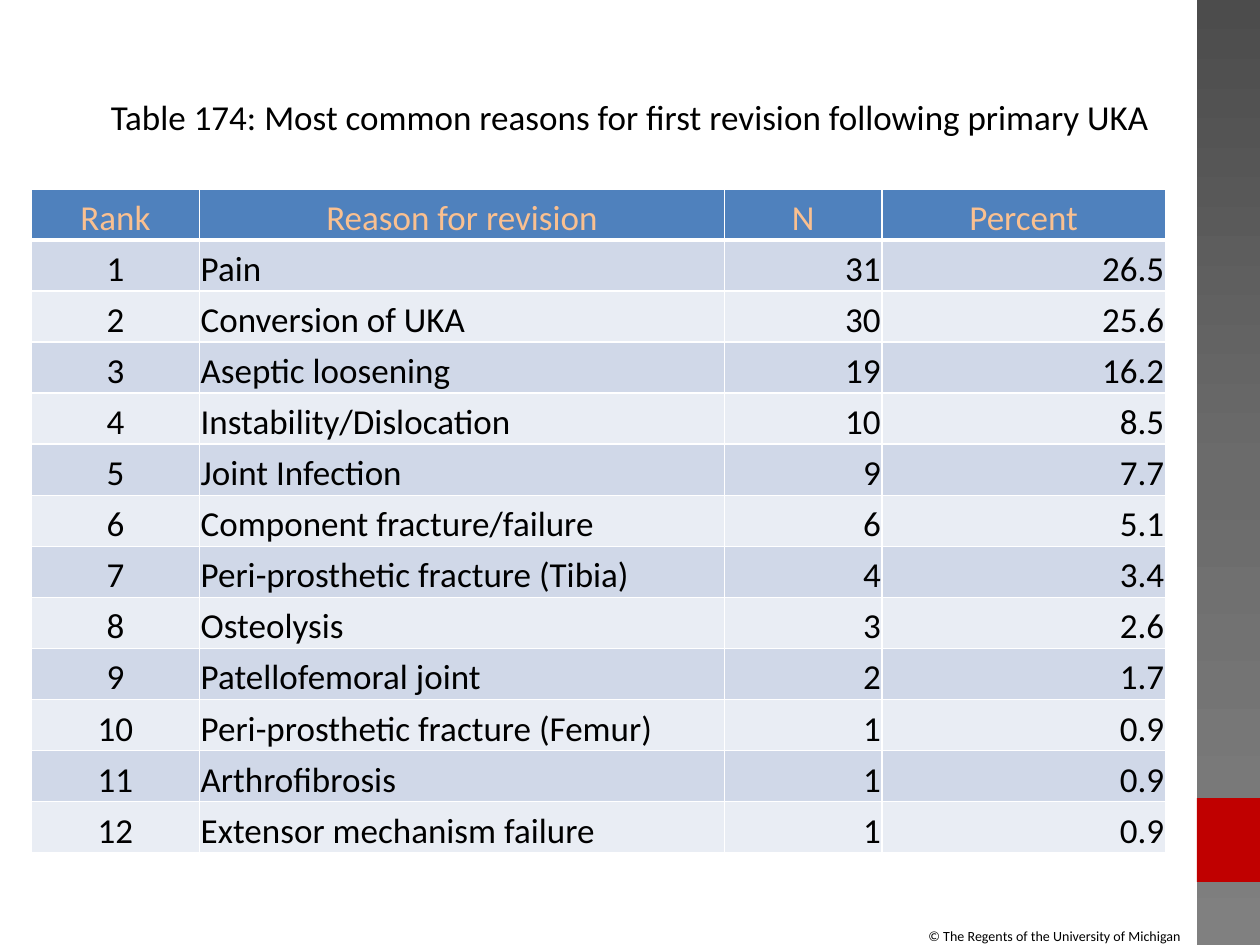
from copy import deepcopy

from lxml import etree
from pptx import Presentation
from pptx.dml.color import RGBColor
from pptx.enum.shapes import MSO_SHAPE
from pptx.enum.text import MSO_ANCHOR, MSO_AUTO_SIZE, PP_ALIGN
from pptx.oxml.ns import qn
from pptx.util import Inches, Pt

RECTANGLE = MSO_SHAPE.RECTANGLE
TOP, MIDDLE, BOTTOM = MSO_ANCHOR.TOP, MSO_ANCHOR.MIDDLE, MSO_ANCHOR.BOTTOM
LEFT, CENTER, RIGHT = PP_ALIGN.LEFT, PP_ALIGN.CENTER, PP_ALIGN.RIGHT
FIT_SHAPE, NO_FIT = MSO_AUTO_SIZE.SHAPE_TO_FIT_TEXT, MSO_AUTO_SIZE.NONE

FONT = "Calibri"
GRID = Inches(1) / 12
COLORS = {
    "text": "000000",
    "header_text": "FAC090",
    "header": "4F81BD",
    "odd_row": "D0D8E8",
    "even_row": "E9EDF4",
    "border": "FFFFFF",
    "accent": "C00000",
    "bar_top": "4C4C4C",
    "bar_middle": "6B6B6B",
    "bar_bottom": "808080",
}
HEADERS = ["Rank", "Reason for revision", "N", "Percent"]
REASONS = [
    ("Pain", 31, 26.5),
    ("Conversion of UKA", 30, 25.6),
    ("Aseptic loosening", 19, 16.2),
    ("Instability/Dislocation", 10, 8.5),
    ("Joint Infection", 9, 7.7),
    ("Component fracture/failure", 6, 5.1),
    ("Peri-prosthetic fracture (Tibia)", 4, 3.4),
    ("Osteolysis", 3, 2.6),
    ("Patellofemoral joint", 2, 1.7),
    ("Peri-prosthetic fracture (Femur)", 1, 0.9),
    ("Arthrofibrosis", 1, 0.9),
    ("Extensor mechanism failure", 1, 0.9),
]


def grid(units):
    return round(units * GRID)


def rgb(name):
    return RGBColor.from_string(COLORS[name])


def write_text(frame, text, size=20, color="text", align=LEFT):
    paragraph = frame.paragraphs[0]
    paragraph.alignment = align
    run = paragraph.add_run()
    run.text = text
    run.font.name = FONT
    run.font.size = Pt(size)
    run.font.color.rgb = rgb(color)


class SlideBuilder:
    def __init__(self, slide):
        self.slide = slide

    def rectangle(self, *box, colors):
        shape = self.slide.shapes.add_shape(RECTANGLE, *map(grid, box))
        shape.shadow.inherit = False
        shape.line.fill.background()
        if len(colors) == 1:
            shape.fill.solid()
            shape.fill.fore_color.rgb = rgb(colors[0])
        else:
            self.gradient(shape, colors)

    def gradient(self, shape, colors):
        shape.fill.gradient()
        shape.fill.gradient_angle = 270
        stop_list = next(shape._element.iter(qn("a:gsLst")))
        while len(stop_list) < len(colors):
            stop_list.append(deepcopy(stop_list[0]))
        for index, stop in enumerate(shape.fill.gradient_stops):
            stop.position = index / (len(colors) - 1)
            stop.color.rgb = rgb(colors[index])

    def text(self, text, *box, wrap=True, anchor=TOP, fit=NO_FIT, **style):
        frame = self.slide.shapes.add_textbox(*map(grid, box)).text_frame
        frame.word_wrap = wrap
        frame.auto_size = fit
        frame.vertical_anchor = anchor
        write_text(frame, text, **style)

    def borders(self, cell, **widths):
        properties = cell._tc.get_or_add_tcPr()
        for side in "LRTB":
            line = etree.SubElement(properties, qn(f"a:ln{side}"), w=str(Pt(widths.get(side, 1))))
            fill = etree.SubElement(line, qn("a:solidFill"))
            etree.SubElement(fill, qn("a:srgbClr"), val=COLORS["border"])

    def cell(self, cell, text, fill, widths, **style):
        cell.margin_left = cell.margin_right = cell.margin_top = Inches(0.01)
        cell.margin_bottom = 0
        cell.vertical_anchor = BOTTOM
        self.borders(cell, **widths)
        cell.fill.solid()
        cell.fill.fore_color.rgb = rgb(fill)
        write_text(cell.text_frame, text, **style)

    def table(self, rows, left, top, height, widths, alignments):
        table = self.slide.shapes.add_table(
            len(rows), len(widths), grid(left), grid(top), grid(sum(widths)), grid(height)
        ).table
        for column, width in zip(table.columns, widths):
            column.width = grid(width)
        for row_index, values in enumerate(rows):
            table.rows[row_index].height = grid(height / len(rows))
            header = row_index == 0
            fill = "header" if header else "odd_row" if row_index % 2 else "even_row"
            color = "header_text" if header else "text"
            edges = {"B": 3} if header else {"T": 3} if row_index == 1 else {}
            for column_index, value in enumerate(values):
                align = CENTER if header else alignments[column_index]
                self.cell(table.cell(row_index, column_index), str(value), fill, edges,
                          color=color, align=align)


def main():
    presentation = Presentation()
    presentation.slide_width = grid(120)
    presentation.slide_height = grid(90)
    builder = SlideBuilder(presentation.slides.add_slide(presentation.slide_layouts[6]))
    builder.rectangle(114, 0, 6, 90, colors=["bar_top", "bar_middle", "bar_bottom"])
    builder.rectangle(114, 76, 6, 8, colors=["accent"])
    builder.text("© The Regents of the University of Michigan", 87.24, 87.72, 26.76, 2.88,
                 wrap=False, fit=FIT_SHAPE, size=8)
    builder.text("Table 174: Most common reasons for first revision following primary UKA",
                 6, 3.6, 108, 15, anchor=MIDDLE, align=CENTER)
    rows = [HEADERS] + [(rank, *reason) for rank, reason in enumerate(REASONS, 1)]
    builder.table(rows, 3, 18, 63.24, [16, 50, 15, 27], [CENTER, LEFT, RIGHT, RIGHT])
    presentation.save("out.pptx")


if __name__ == "__main__":
    main()
